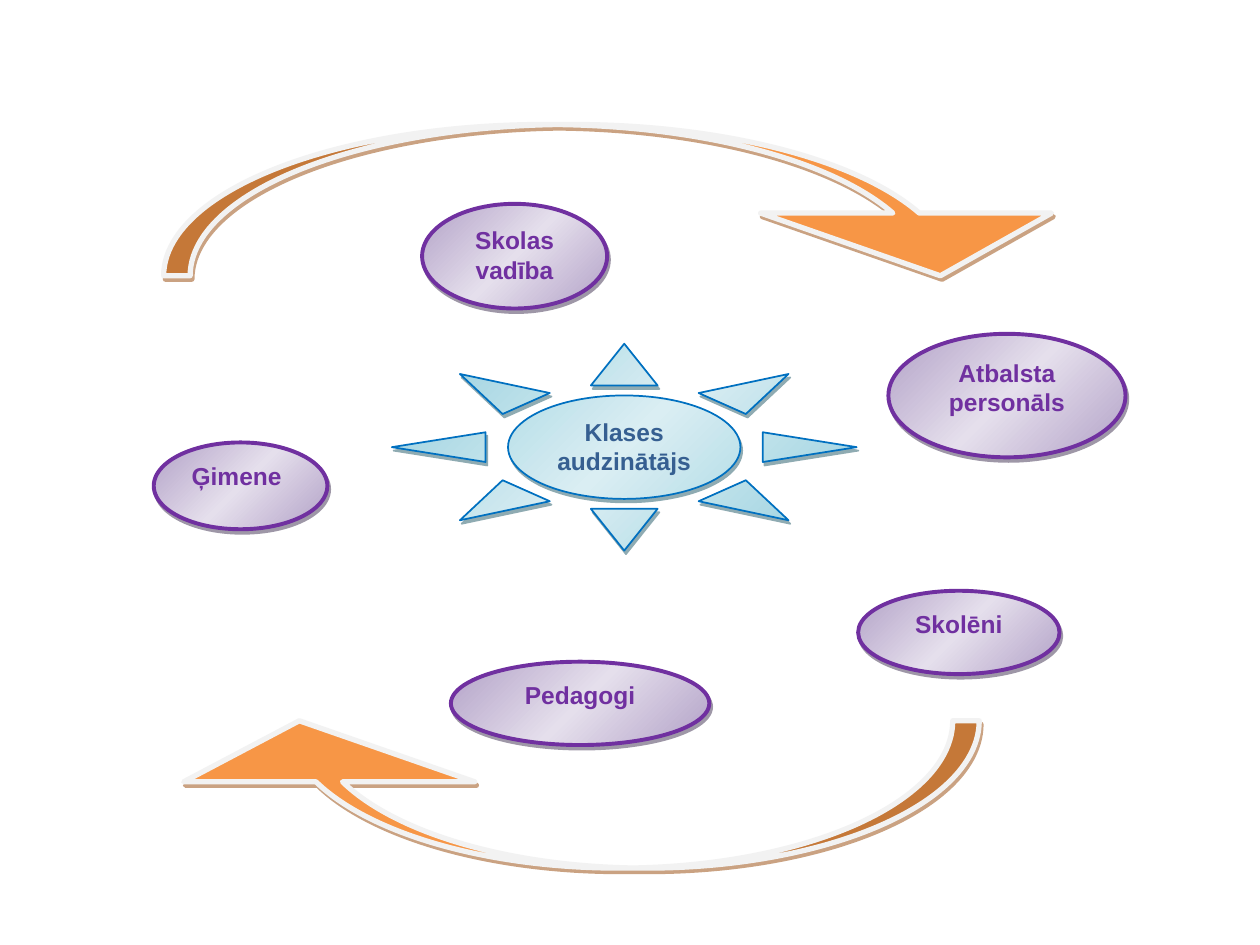
from copy import deepcopy

from lxml import etree
from pptx import Presentation
from pptx import util as u
from pptx.dml.color import RGBColor
from pptx.enum import shapes, text
from pptx.oxml.ns import qn

Kind = shapes.MSO_SHAPE


def colour(hex_value):
    return RGBColor.from_string(hex_value)


def add_shadow(shape, hex_value):
    """Hard, half-transparent shadow to the lower right."""
    shape.shadow.inherit = False
    effects = shape._element.spPr.find(qn("a:effectLst"))
    shadow = etree.SubElement(effects, qn("a:outerShdw"), blurRad="0", dist="28400",
                              dir="3780000", algn="ctr", rotWithShape="0")
    tint = etree.SubElement(shadow, qn("a:srgbClr"), val=hex_value)
    etree.SubElement(tint, qn("a:alpha"), val="50000")


def fill_gradient(shape, edge, middle):
    """Diagonal gradient with the same colour at both ends."""
    shape.fill.gradient()
    shape.fill.gradient_angle = 315
    stops = shape._element.spPr.find(qn("a:gradFill")).find(qn("a:gsLst"))
    stops.append(deepcopy(stops[-1]))
    for stop, place, shade in zip(shape.fill.gradient_stops, (0, 0.5, 1), (edge, middle, edge)):
        stop.position = place
        stop.color.rgb = colour(shade)


def add_outlined(page, kind, box, line, width, shadow):
    shape = page.shapes.add_shape(kind, *(u.Cm(length) for length in box))
    shape.line.color.rgb = colour(line)
    shape.line.width = u.Pt(width)
    add_shadow(shape, shadow)
    return shape


def write_label(shape, words, hex_value, align):
    frame = shape.text_frame
    frame.text = words
    frame.word_wrap = True
    frame.vertical_anchor = text.MSO_ANCHOR.TOP
    para = frame.paragraphs[0]
    para.alignment = align
    font = para.runs[0].font
    font.name, font.size, font.bold = "Arial", u.Pt(14), True
    font.color.rgb = colour(hex_value)


def add_sun(page, box, words):
    sun = add_outlined(page, Kind.SUN, box, "0070C0", 1, "205867")
    sun.adjustments[0] = 0.25
    fill_gradient(sun, "92CDDC", "DAEEF3")
    write_label(sun, words, "365F91", text.PP_ALIGN.CENTER)


def add_role(page, box, words, align=text.PP_ALIGN.CENTER):
    oval = add_outlined(page, Kind.OVAL, box, "7030A0", 2.25, "3F3151")
    fill_gradient(oval, "B2A1C7", "E5DFEC")
    write_label(oval, words, "7030A0", align)


def add_cycle_arrow(page, box, bends, rotation=0):
    arrow = add_outlined(page, Kind.CURVED_DOWN_ARROW, box, "F2F2F2", 3, "974706")
    arrow.fill.solid()
    arrow.fill.fore_color.rgb = colour("F79646")
    for index, bend in enumerate(bends):
        arrow.adjustments[index] = bend
    arrow.rotation = rotation


def main():
    deck = Presentation()
    deck.slide_width, deck.slide_height = u.Cm(25.4), u.Cm(19.05)
    page = deck.slides.add_slide(deck.slide_layouts[6])

    # Class teacher in the centre
    add_sun(page, (7.9, 6.93, 9.37, 4.17), "Klases audzinātājs")

    # People around the teacher
    add_role(page, (3.1, 8.92, 3.5, 1.75), "Ģimene", text.PP_ALIGN.LEFT)
    add_role(page, (8.51, 4.11, 3.73, 2.11), "Skolas vadība")
    add_role(page, (9.09, 13.34, 5.21, 1.68), "Pedagogi")
    add_role(page, (17.91, 6.73, 4.78, 2.49), "Atbalsta personāls")
    add_role(page, (17.3, 11.91, 4.06, 1.68), "Skolēni")

    # Arrows closing the cycle
    add_cycle_arrow(page, (3.1, 14.53, 16.64, 2.97), (0.18, 1.975, 0.414), 180)
    add_cycle_arrow(page, (3.3, 2.51, 18.59, 3.05), (0.175, 1.923, 0.414))

    deck.save("out.pptx")


if __name__ == "__main__":
    main()
